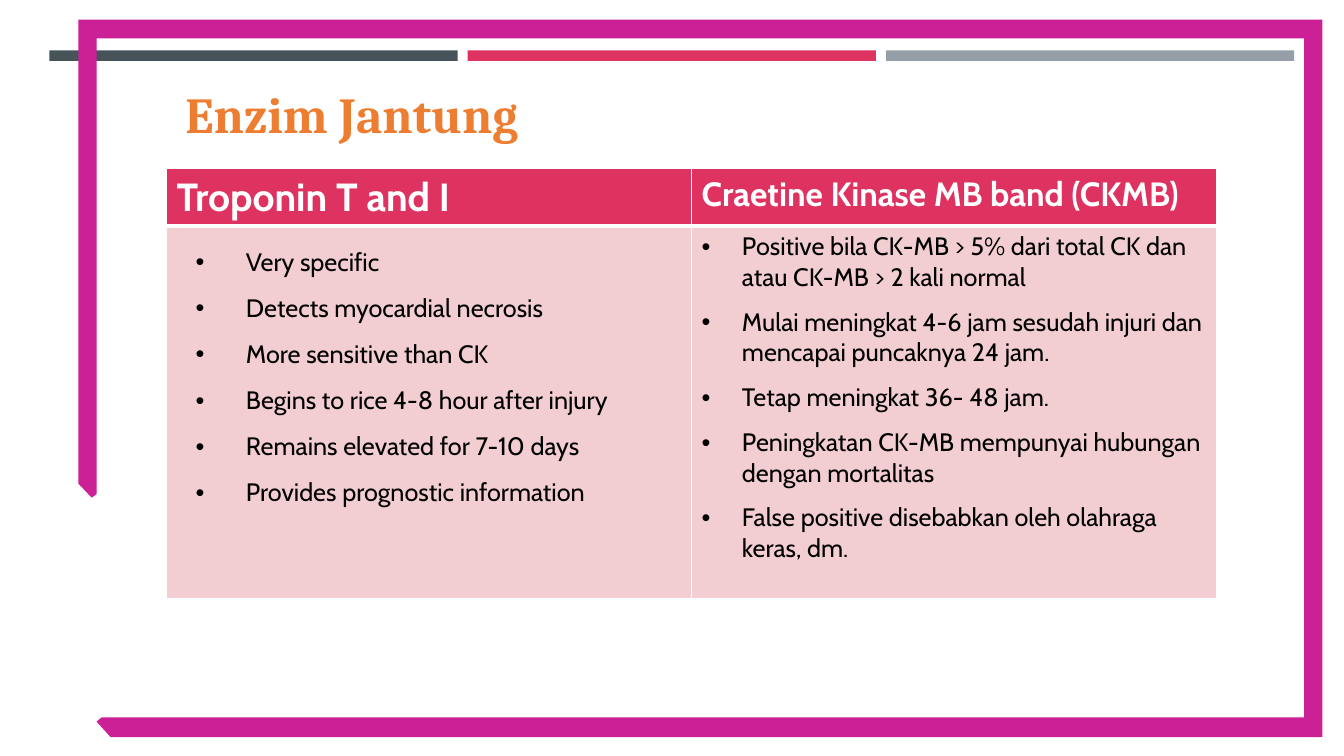
from lxml import etree
from pptx import Presentation
from pptx.dml.color import RGBColor
from pptx.enum import shapes, text
from pptx.oxml import ns
from pptx.util import Pt

SLATE = RGBColor(0x46, 0x53, 0x59)
CRIMSON = RGBColor(0xDE, 0x32, 0x61)
GREY = RGBColor(0x96, 0x9F, 0xA7)
MAGENTA = RGBColor(0xCC, 0x20, 0x97)
ORANGE = RGBColor(0xED, 0x7D, 0x31)
PINK = RGBColor(0xF2, 0xCE, 0xD2)
WHITE = RGBColor(0xFF, 0xFF, 0xFF)
BLACK = RGBColor(0, 0, 0)

FRAME = [
    (56, 14), (944.5, 14), (944.5, 526.5), (79, 526.5), (69, 515.5),
    (72.5, 512.5), (931.5, 512.5), (931.5, 27.5), (69, 27.5),
    (69, 353), (65.5, 355.5), (56, 345.5),
]
TROPONIN = [
    "Very specific",
    "Detects myocardial necrosis",
    "More sensitive than CK",
    "Begins to rice 4-8 hour after injury",
    "Remains elevated for 7-10 days",
    "Provides prognostic information",
]
CKMB = [
    "Positive bila CK-MB > 5% dari total CK dan atau CK-MB > 2 kali normal",
    "Mulai meningkat 4-6 jam sesudah injuri dan mencapai puncaknya 24 jam.",
    "Tetap meningkat 36- 48 jam.",
    "Peningkatan CK-MB mempunyai hubungan dengan mortalitas",
    "False positive disebabkan oleh olahraga keras, dm.",
]


def paint(shape, color):
    shape.shadow.inherit = False
    shape.fill.solid()
    shape.fill.fore_color.rgb = color
    shape.line.fill.background()


def add_bars(slide):
    for column, color in enumerate((SLATE, CRIMSON, GREY)):
        bar = slide.shapes.add_shape(
            shapes.MSO_SHAPE.RECTANGLE,
            Pt(35.3 + 298.8 * column), Pt(36), Pt(291.6), Pt(7.5))
        paint(bar, color)


def add_frame(slide):
    corners = [(Pt(x), Pt(y)) for x, y in FRAME]
    builder = slide.shapes.build_freeform(*corners[0])
    builder.add_line_segments(corners[1:], close=True)
    paint(builder.convert_to_shape(), MAGENTA)


def add_run(paragraph, words, size, color, bold=False, face="Cabin"):
    run = paragraph.add_run()
    run.text = words
    run.font.name = face
    run.font.size = Pt(size)
    run.font.bold = bold
    run.font.color.rgb = color


def set_title(slide, words):
    title = slide.shapes.title
    title.left, title.top = Pt(125.3), Pt(50.4)
    title.width, title.height = Pt(805), Pt(56.9)
    frame = title.text_frame
    frame.word_wrap = True
    frame.auto_size = text.MSO_AUTO_SIZE.NONE
    frame.vertical_anchor = text.MSO_ANCHOR.MIDDLE
    heading = frame.paragraphs[0]
    heading.alignment = text.PP_ALIGN.LEFT
    heading.line_spacing = 1.1
    heading.space_before = Pt(0)
    heading.space_after = Pt(6)
    add_run(heading, words, 36, ORANGE, True, "Cambria")


def style_cell(cell, color, top, bottom):
    """Fill a cell and give it white borders; top and bottom are widths."""
    properties = cell._tc.get_or_add_tcPr()
    for side, width in (("L", 1), ("R", 1), ("T", top), ("B", bottom)):
        border = etree.SubElement(
            properties, ns.qn(f"a:ln{side}"), w=str(Pt(width)))
        fill = etree.SubElement(border, ns.qn("a:solidFill"))
        etree.SubElement(fill, ns.qn("a:srgbClr"), val=str(WHITE))
    cell.fill.solid()
    cell.fill.fore_color.rgb = color


def add_bullets(cell, items, margin, hanging, line_spacing, gap):
    frame = cell.text_frame
    for index, item in enumerate(items):
        paragraph = frame.add_paragraph() if index else frame.paragraphs[0]
        properties = paragraph._p.get_or_add_pPr()
        properties.set("marL", str(Pt(margin)))
        properties.set("indent", str(Pt(-hanging)))
        etree.SubElement(properties, ns.qn("a:buFont"), typeface="Arial")
        etree.SubElement(properties, ns.qn("a:buChar"), char="•")
        paragraph.line_spacing = line_spacing
        paragraph.space_before = Pt(gap if index else 0)
        add_run(paragraph, item, 18, BLACK)


def add_enzyme_table(slide):
    table = slide.shapes.add_table(
        2, 2, Pt(119), Pt(120.4), Pt(750), Pt(307)).table
    table.rows[0].height = Pt(41)
    table.rows[1].height = Pt(266)
    headers = (("Troponin T and I", 28),
               ("Craetine Kinase MB band (CKMB)", 24))
    for column, (words, size) in enumerate(headers):
        header = table.cell(0, column)
        style_cell(header, CRIMSON, 1, 3)
        add_run(header.text_frame.paragraphs[0], words, size, WHITE, True)
        style_cell(table.cell(1, column), PINK, 3, 1)
    add_bullets(table.cell(1, 0), TROPONIN, 49.5, 36, 1.5, 0)
    add_bullets(table.cell(1, 1), CKMB, 28.8, 28.8, 1.0, 10)


def main():
    deck = Presentation()
    deck.slide_width, deck.slide_height = Pt(960), Pt(540)
    slide = deck.slides.add_slide(deck.slide_layouts[5])
    add_bars(slide)
    add_frame(slide)
    set_title(slide, "Enzim Jantung")
    add_enzyme_table(slide)
    deck.save("out.pptx")


if __name__ == "__main__":
    main()
